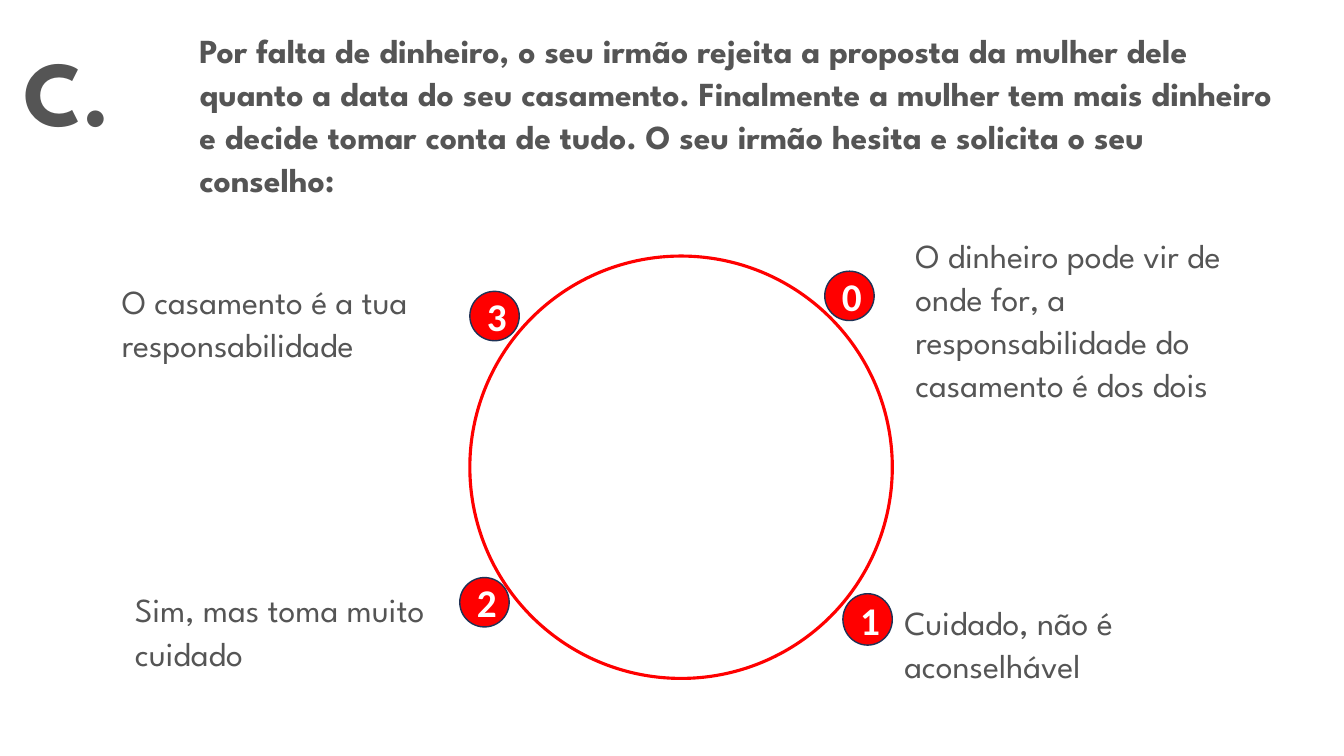
from pptx import Presentation
from pptx.dml.color import RGBColor
from pptx.enum import shapes, text
from pptx.util import Inches, Pt

THEME = {
    "ink": RGBColor.from_string("555555"),
    "paper": RGBColor.from_string("FFFFFF"),
    "red": RGBColor.from_string("FF0000"),
    "navy": RGBColor.from_string("1E3256"),
    "body_font": "League Spartan",
    "number_font": "Calibri",
    "letter_size": 66,
    "number_size": 28,
    "body_size": 24,
}
BODY = {"name": THEME["body_font"], "size": Pt(THEME["body_size"]), "bold": False}
HEADING = BODY | {"bold": True}
LETTER = HEADING | {"size": Pt(THEME["letter_size"])}
NUMBER = {"name": THEME["number_font"], "size": Pt(THEME["number_size"]), "bold": True}
PROSE = {"alignment": text.PP_ALIGN.LEFT, "line_spacing": 1.07, "space_after": Pt(8)}

prs = Presentation()
prs.slide_width, prs.slide_height = Inches(13.33), Inches(7.5)
slide = prs.slides.add_slide(prs.slide_layouts[6])


def write(shape, words, font, color, paragraph_format, anchor, autofit):
    frame = shape.text_frame
    frame.word_wrap = True
    frame.auto_size = autofit
    frame.vertical_anchor = anchor
    paragraph = frame.paragraphs[0]
    for key, value in paragraph_format.items():
        setattr(paragraph, key, value)
    run = paragraph.add_run()
    run.text = words
    run.font.color.rgb = color
    for key, value in font.items():
        setattr(run.font, key, value)


def add_plain(kind, box, fill=None, line=None, weight=1):
    """Add a shadowless shape; a missing fill or line colour leaves it off."""
    shape = slide.shapes.add_shape(kind, *map(Inches, box))
    shape.shadow.inherit = False
    if fill is None:
        shape.fill.background()
    else:
        shape.fill.solid()
        shape.fill.fore_color.rgb = fill
    if line is None:
        shape.line.fill.background()
    else:
        shape.line.color.rgb = line
        shape.line.width = Pt(weight)
    return shape


GROW = text.MSO_AUTO_SIZE.SHAPE_TO_FIT_TEXT
TOP, MIDDLE = text.MSO_ANCHOR.TOP, text.MSO_ANCHOR.MIDDLE
OVAL, RECTANGLE = shapes.MSO_SHAPE.OVAL, shapes.MSO_SHAPE.RECTANGLE

dilemma = slide.shapes.add_textbox(*map(Inches, (1.88, 0.22, 10.94, 1.82)))
write(dilemma,
      "Por falta de dinheiro, o seu irmão rejeita a proposta da mulher dele "
      "quanto a data do seu casamento. Finalmente a mulher tem mais dinheiro "
      "e decide tomar conta de tudo. O seu irmão hesita e solicita o seu conselho:",
      HEADING, THEME["ink"], PROSE, TOP, GROW)

# Score, its circle, the advice and its box
answers = [
    ("3", (4.66, 2.89, 0.49, 0.49),
     "O casamento é a tua responsabilidade", (1.11, 2.71, 3.53, 0.96)),
    ("0", (8.18, 2.69, 0.49, 0.49),
     "O dinheiro pode vir de onde for, a responsabilidade do casamento é dos dois",
     (8.98, 2.25, 3.81, 1.82)),
    ("1", (8.36, 5.89, 0.49, 0.51),
     "Cuidado, não é aconselhável", (8.87, 5.89, 3.51, 0.96)),
    ("2", (4.56, 5.73, 0.49, 0.49),
     "Sim, mas toma muito cuidado", (1.24, 5.77, 3.3, 0.96)),
]
for score, score_box, advice, advice_box in answers:
    write(add_plain(OVAL, score_box, THEME["red"], THEME["navy"]), score, NUMBER,
          THEME["paper"], {"alignment": text.PP_ALIGN.CENTER}, MIDDLE,
          text.MSO_AUTO_SIZE.NONE)
    write(add_plain(RECTANGLE, advice_box, THEME["paper"]), advice, BODY,
          THEME["ink"], PROSE, TOP, GROW)

question_letter = slide.shapes.add_textbox(*map(Inches, (0.13, 0.29, 1.29, 1.21)))
write(question_letter, "C.", LETTER, THEME["ink"], {}, TOP, GROW)

add_plain(OVAL, (4.66, 2.54, 4.19, 4.19), line=THEME["red"], weight=2.25)

prs.save("out.pptx")
